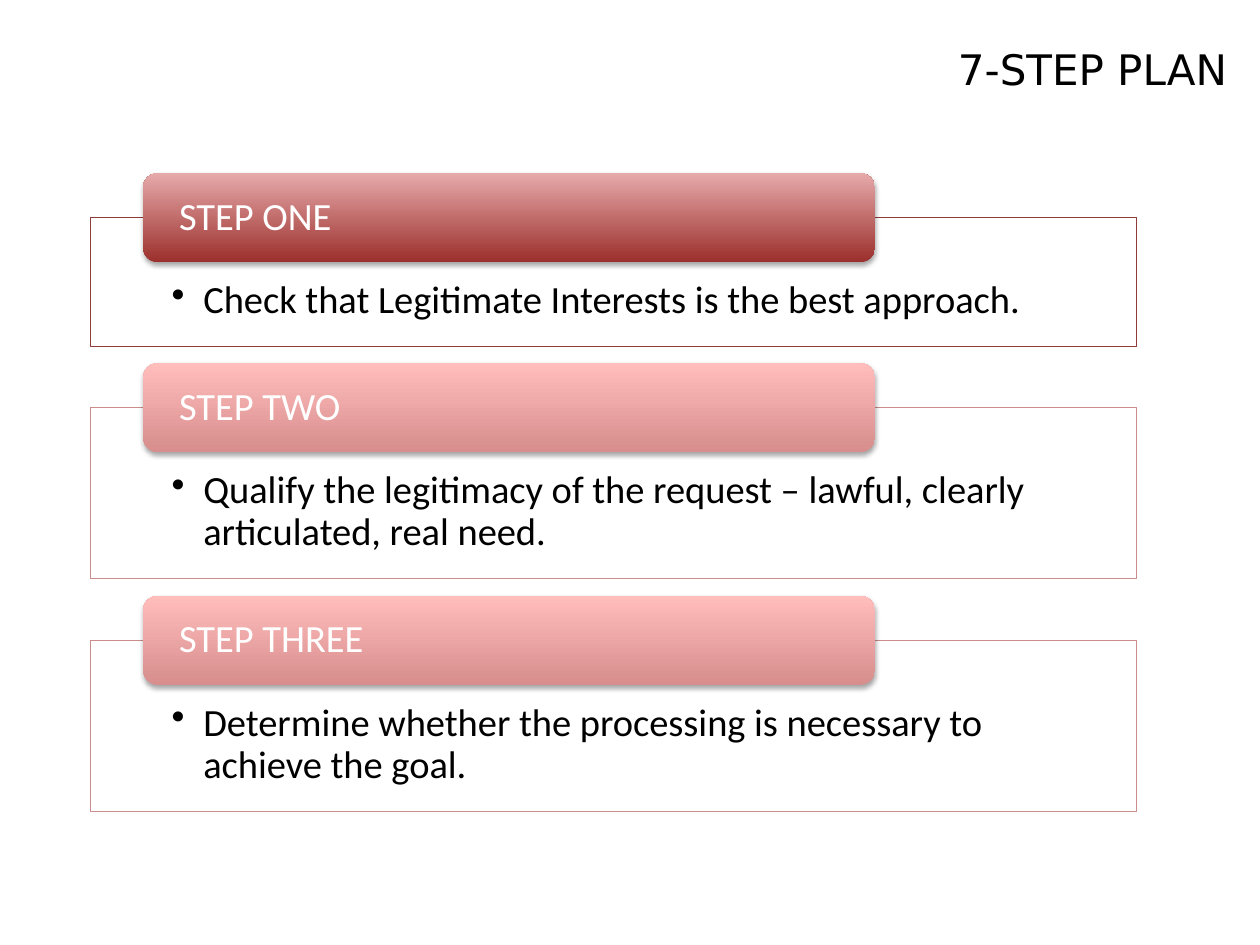
from lxml.etree import SubElement
from pptx import Presentation
from pptx.dml.color import RGBColor
from pptx.enum.shapes import MSO_SHAPE as Shape
from pptx.enum.text import MSO_ANCHOR as Anchor, PP_ALIGN as Align
from pptx.oxml.ns import qn
from pptx.util import Cm, Pt

BLACK = RGBColor(0x00, 0x00, 0x00)
WHITE = RGBColor(0xFF, 0xFF, 0xFF)
# Each palette: panel border, bottom of the tab, top of the tab
STRONG = (RGBColor(0x8E, 0x3B, 0x39), RGBColor(0x9B, 0x2F, 0x2C), RGBColor(0xE6, 0xAA, 0xAA))
PALE = (RGBColor(0xCB, 0x8C, 0x8B), RGBColor(0xD7, 0x8E, 0x8D), RGBColor(0xFF, 0xBD, 0xBC))

TAB_HEIGHT = 1.8
PANEL_GAP = 1.24

# Heading, text, panel height in cm, palette
STEPS = [
    ("STEP ONE", "Check that Legitimate Interests is the best approach.", 2.59, STRONG),
    ("STEP TWO", "Qualify the legitimacy of the request – lawful, clearly articulated, real need.",
     3.45, PALE),
    ("STEP THREE", "Determine whether the processing is necessary to achieve the goal.",
     3.45, PALE),
]


def add_text(box, text, size, font, color, align, anchor, insets):
    frame = box.text_frame
    frame.word_wrap = True
    frame.vertical_anchor = anchor
    frame.margin_left, frame.margin_top, frame.margin_right, frame.margin_bottom = map(Cm, insets)
    para = frame.paragraphs[0]
    para.alignment = align
    span = para.add_run()
    span.text = text
    span.font.size = Pt(size)
    span.font.name = font
    span.font.color.rgb = color
    return para


def add_bullet(para):
    props = para._p.get_or_add_pPr()
    props.set("marL", str(Cm(0.64)))
    props.set("indent", str(-Cm(0.64)))
    SubElement(props, qn("a:buChar"), char="•")


def add_soft_shadow(shape):
    effects = shape._element.spPr.find(qn("a:effectLst"))
    shadow = SubElement(effects, qn("a:outerShdw"), blurRad=str(Pt(3.1)), dist=str(Pt(1.8)),
                        dir="5400000", rotWithShape="0")
    color = SubElement(shadow, qn("a:srgbClr"), val=str(BLACK))
    SubElement(color, qn("a:alpha"), val="35000")


def add_title(page, left, top, width, height):
    box = page.shapes.add_textbox(Cm(left), Cm(top), Cm(width), Cm(height))
    add_text(box, "7-STEP PLAN", 24, "DejaVu Sans", BLACK, Align.RIGHT, Anchor.TOP,
             (0.25, 0.13, 0.25, 0.13))


def add_step(page, left, top, width, height, heading, text, palette):
    border, tab_bottom, tab_top = palette

    # Outlined panel with the bulleted text
    panel = page.shapes.add_shape(Shape.RECTANGLE, Cm(left), Cm(top), Cm(width), Cm(height))
    panel.shadow.inherit = False
    panel.fill.solid()
    panel.fill.fore_color.rgb = WHITE
    fill_color = panel._element.spPr.find(qn("a:solidFill")).find(qn("a:srgbClr"))
    SubElement(fill_color, qn("a:alpha"), val="90000")
    panel.line.color.rgb = border
    panel.line.width = Pt(0.75)
    para = add_text(panel, text, 22, "Calibri", BLACK, Align.LEFT, Anchor.TOP,
                    (1.63, 1.27, 1.63, 0.43))
    para.line_spacing = 0.9
    add_bullet(para)

    # Heading tab, centred on the panel's top edge
    tab = page.shapes.add_shape(Shape.ROUNDED_RECTANGLE, Cm(left + 0.05 * width),
                                Cm(top - TAB_HEIGHT / 2), Cm(0.7 * width), Cm(TAB_HEIGHT))
    tab.shadow.inherit = False
    add_soft_shadow(tab)
    tab.fill.gradient()
    tab.fill.gradient_angle = 90
    for stop, color in zip(tab.fill.gradient_stops, (tab_bottom, tab_top)):
        stop.color.rgb = color
    tab.line.fill.background()
    para = add_text(tab, heading, 22, "Calibri", WHITE, Align.LEFT, Anchor.MIDDLE,
                    (0.64, 0, 0.64, 0))
    para.line_spacing = 0.9


def add_step_list(page, left, top, width):
    for heading, text, height, palette in STEPS:
        add_step(page, left, top, width, height, heading, text, palette)
        top += height + PANEL_GAP


def main():
    deck = Presentation()
    deck.slide_width, deck.slide_height = Cm(25.4), Cm(19.05)
    page = deck.slides.add_slide(deck.slide_layouts[6])
    add_title(page, 7.19, 0.74, 17.8, 3.18)
    add_step_list(page, 1.83, 4.39, 21.08)
    deck.save("out.pptx")


if __name__ == "__main__":
    main()
